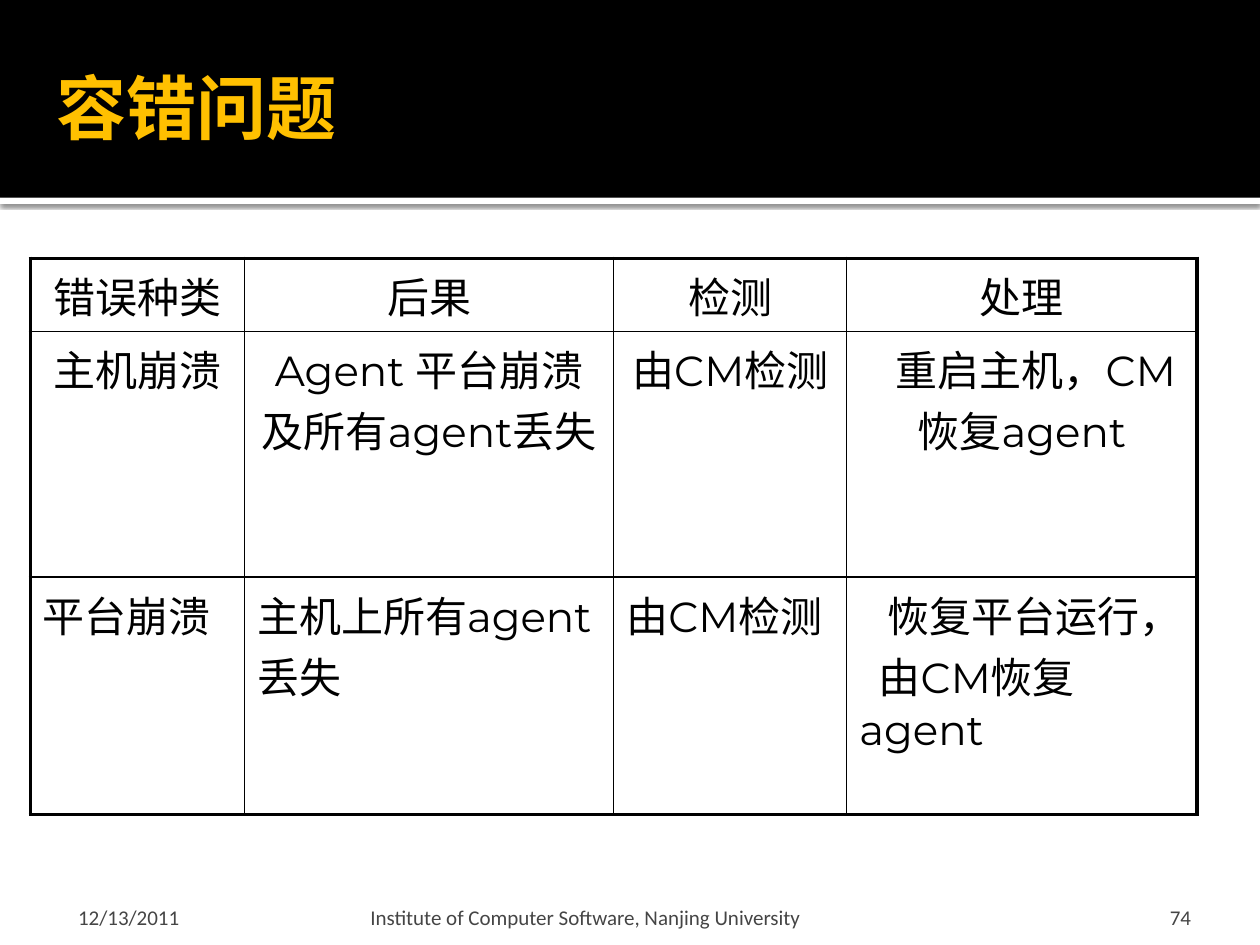
from lxml.etree import SubElement
from pptx import Presentation
from pptx.dml.color import RGBColor
from pptx.enum.shapes import MSO_SHAPE
from pptx.enum.text import MSO_ANCHOR, PP_ALIGN
from pptx.oxml.ns import qn
from pptx.util import Pt

THEME = {
    "black": "000000", "white": "FFFFFF", "title": "FFC000", "footer": "454545",
    "sans": "Calibri", "latin": "Montserrat", "cjk": "Times New Roman",
    "title_size": 40, "body_size": 24, "footer_size": 12,
    "outer_line": 2.25, "inner_line": 1,
}
W, H = 720, 540
BAND_H, STRIP_H = 113, 3.6

TITLE = "容错问题"
HEADERS = ["错误种类", "后果", "检测", "处理"]
# Each cell is a list of paragraphs: (first-line indent, pieces of text)
BODY = [
    [[(0, ["主机崩溃"])],
     [(0, ["Agent ", "平台崩溃及所有", "agent", "丢失"])],
     [(0, ["由", "CM", "检测"])],
     [(16, ["重启主机，", "CM", "恢复", "agent"])]],
    [[(0, ["平台崩溃"])],
     [(0, ["主机上所有", "agent", "丢失"])],
     [(0, ["由", "CM", "检测"])],
     [(16, ["恢复平台运行，"]), (11, ["由", "CM", "恢复", "agent"])]],
]
COLS = [122.4, 211, 133.2, 200.2]
ROWS = [41.8, 140.4, 135.5]
TABLE_AT = (17.3, 147.6)

# text, left, width, left inset, right inset, alignment
FOOTERS = [
    ("12/13/2011", 36, 168, 8.6, 3.6, PP_ALIGN.LEFT),
    ("Institute of Computer Software, Nanjing University", 208, 433.4, 3.6, 3.6, PP_ALIGN.LEFT),
    ("74", 645.8, 57.6, 7.2, 7.2, PP_ALIGN.CENTER),
]


def add_run(p, text, *, size, font, color, bold=False):
    r = p.add_run()
    r.text = text
    r.font.size, r.font.name, r.font.bold = Pt(size), font, bold
    r.font.color.rgb = RGBColor.from_string(color)


def add_text(slide, text, box, *, insets, anchor, align=PP_ALIGN.LEFT, **fmt):
    tf = slide.shapes.add_textbox(*map(Pt, box)).text_frame
    tf.word_wrap, tf.vertical_anchor = True, anchor
    tf.margin_left, tf.margin_top, tf.margin_right, tf.margin_bottom = map(Pt, insets)
    p = tf.paragraphs[0]
    p.alignment = align
    add_run(p, text, **fmt)


def add_bar(slide, top, height, color):
    sp = slide.shapes.add_shape(MSO_SHAPE.RECTANGLE, 0, Pt(top), Pt(W), Pt(height))
    sp.shadow.inherit = False
    sp.fill.solid()
    sp.fill.fore_color.rgb = RGBColor.from_string(color)
    sp.line.fill.background()
    return sp


def add_shadow(sp, *, blur, dist, alpha):
    effects = sp.fill._xPr.find(qn("a:effectLst"))
    shadow = SubElement(effects, qn("a:outerShdw"), blurRad=str(Pt(blur)),
                        dist=str(Pt(dist)), dir="5400000", rotWithShape="0")
    color = SubElement(shadow, qn("a:srgbClr"), val=THEME["black"])
    SubElement(color, qn("a:alpha"), val=str(alpha * 1000))


def set_borders(cell, on_edge):
    """Draw the four sides, thicker where the side is on the table's edge."""
    tc_pr = cell._tc.get_or_add_tcPr()
    for i, (side, outer) in enumerate(on_edge.items()):
        width = THEME["outer_line" if outer else "inner_line"]
        ln = tc_pr.makeelement(qn(f"a:ln{side}"), {"w": str(Pt(width))})
        fill = SubElement(ln, qn("a:solidFill"))
        SubElement(fill, qn("a:srgbClr"), val=THEME["black"])
        tc_pr.insert(i, ln)


def fill_cell(cell, paragraphs, *, align, header):
    tf = cell.text_frame
    for i, (indent, pieces) in enumerate(paragraphs):
        p = tf.add_paragraph() if i else tf.paragraphs[0]
        p.alignment = align
        p.space_before = Pt(0 if i else THEME["body_size"] * 0.2)
        if indent:
            p._p.get_or_add_pPr().set("indent", str(Pt(indent)))
        for piece in pieces:
            font = THEME["latin" if header or piece.isascii() else "cjk"]
            add_run(p, piece, size=THEME["body_size"], font=font, color=THEME["black"])


def add_fault_table(slide):
    size = (sum(COLS), sum(ROWS))
    table = slide.shapes.add_table(len(ROWS), len(COLS), *map(Pt, TABLE_AT + size)).table
    table.first_row = table.horz_banding = False
    for col, width in zip(table.columns, COLS):
        col.width = Pt(width)
    rows = [[[(0, [h])] for h in HEADERS]] + BODY
    last_row, last_col = len(ROWS) - 1, len(COLS) - 1
    for r, row in enumerate(rows):
        table.rows[r].height = Pt(ROWS[r])
        for c, paragraphs in enumerate(row):
            cell = table.cell(r, c)
            cell.fill.background()
            set_borders(cell, {"L": c == 0, "R": c == last_col, "T": r == 0, "B": r == last_row})
            align = PP_ALIGN.LEFT if r == last_row else PP_ALIGN.CENTER
            fill_cell(cell, paragraphs, align=align, header=r == 0)


def main():
    prs = Presentation()
    prs.slide_width, prs.slide_height = Pt(W), Pt(H)
    slide = prs.slides.add_slide(prs.slide_layouts[6])

    strip = add_bar(slide, BAND_H, STRIP_H, THEME["white"])
    add_shadow(strip, blur=2.5, dist=0.8, alpha=60)
    add_bar(slide, 0, BAND_H, THEME["black"])
    add_text(slide, TITLE, (25.2, 4.3, 680.4, BAND_H), insets=(7.2, 3.6, 3.6, 3.6),
             anchor=MSO_ANCHOR.MIDDLE, size=THEME["title_size"], font=THEME["sans"],
             color=THEME["title"], bold=True)
    add_fault_table(slide)
    for text, left, width, inset_l, inset_r, align in FOOTERS:
        add_text(slide, text, (left, 509.8, width, 21.6), insets=(inset_l, 3.6, inset_r, 0),
                 anchor=MSO_ANCHOR.BOTTOM, align=align, size=THEME["footer_size"],
                 font=THEME["sans"], color=THEME["footer"])
    prs.save("out.pptx")


if __name__ == "__main__":
    main()
